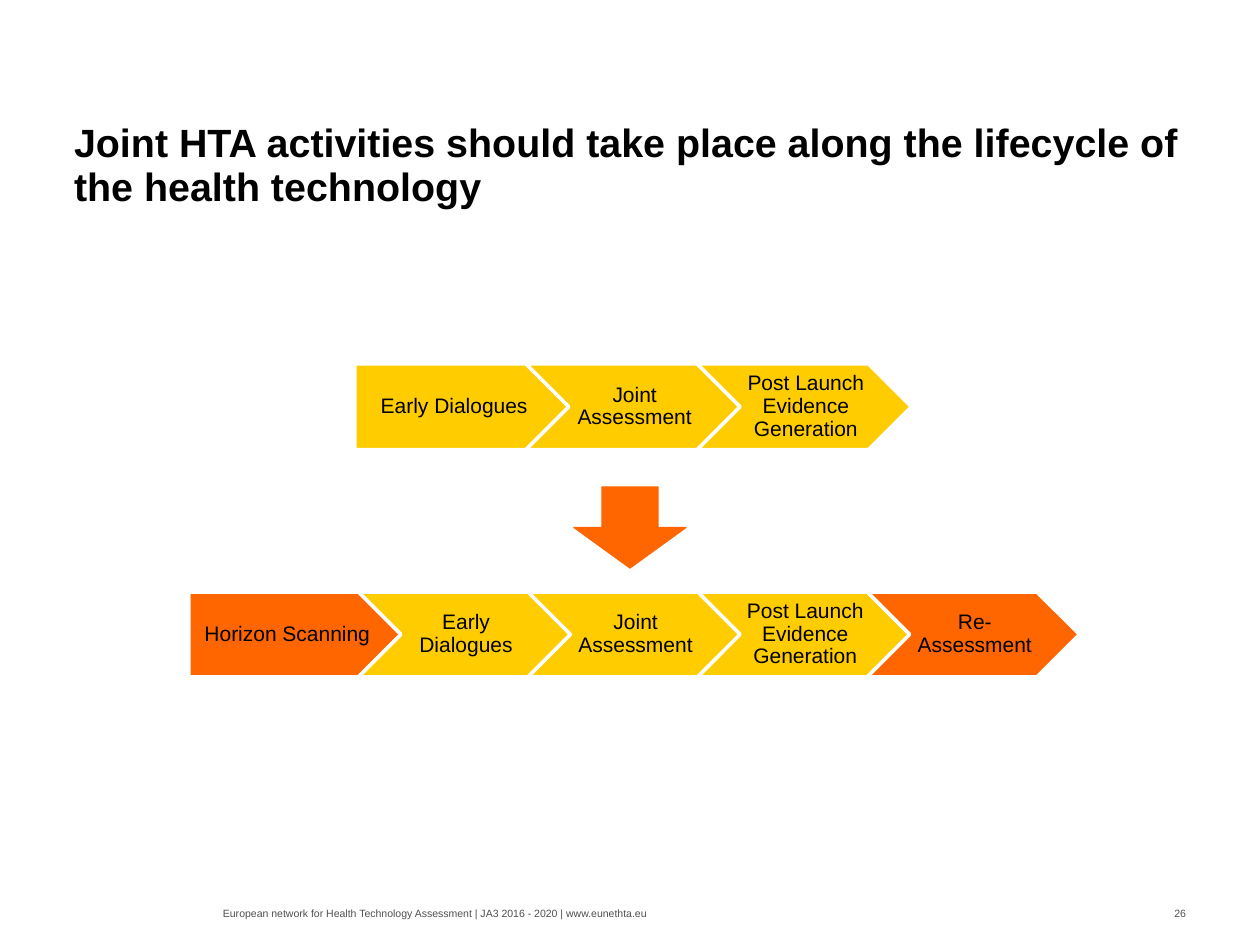
import pptx
import pptx.util
import pptx.dml.color
import pptx.enum.shapes
import pptx.enum.text

SHAPE = pptx.enum.shapes.MSO_SHAPE
ALIGN = pptx.enum.text.PP_ALIGN
ANCHOR = pptx.enum.text.MSO_ANCHOR

YELLOW, ORANGE, WHITE, BLACK, GREY = "FFCC00", "FF6600", "FFFFFF", "000000", "505050"


def px(n):
    return pptx.util.Emu(round(n * 914400 / 126))


def color(value):
    return pptx.dml.color.RGBColor.from_string(value)


class SlideBuilder:
    font = "Arial"

    def __init__(self, slide):
        self.s = slide

    def set_text(self, sp, text, size, ink=BLACK, bold=False, align=ALIGN.LEFT,
                 anchor=ANCHOR.TOP, spacing=1.0, insets=(0, 0, 0, 0)):
        left, top, right, bottom = map(px, insets)
        tf = sp.text_frame
        p = tf.paragraphs[0]
        r = p.add_run()
        formats = (
            (tf, {"word_wrap": True, "auto_size": pptx.enum.text.MSO_AUTO_SIZE.NONE,
                  "vertical_anchor": anchor, "margin_left": left, "margin_top": top,
                  "margin_right": right, "margin_bottom": bottom}),
            (p, {"alignment": align, "line_spacing": spacing}),
            (r, {"text": text}),
            (r.font, {"name": self.font, "size": pptx.util.Pt(size), "bold": bold}),
        )
        for target, values in formats:
            for name, value in values.items():
                setattr(target, name, value)
        r.font.color.rgb = color(ink)

    def title(self, x, y, w, h, text):
        sp = self.s.shapes.title
        sp.left, sp.top, sp.width, sp.height = map(px, (x, y, w, h))
        self.set_text(sp, text, 22.5, bold=True, anchor=ANCHOR.BOTTOM, spacing=0.95)

    def small_text(self, x, y, w, h, text, align=ALIGN.LEFT):
        sp = self.s.shapes.add_textbox(*map(px, (x, y, w, h)))
        self.set_text(sp, text, 6, ink=GREY, align=align)

    def shape(self, kind, x, y, w, h, fill, line, weight):
        sp = self.s.shapes.add_shape(kind, *map(px, (x, y, w, h)))
        sp.shadow.inherit = False
        sp.fill.solid()
        sp.fill.fore_color.rgb = color(fill)
        sp.line.color.rgb = color(line)
        sp.line.width = pptx.util.Pt(weight)
        return sp

    def process(self, x, y, w, steps):
        """Row of arrows, each overlapping the one before by a fifth."""
        for i, (text, fill) in enumerate(steps):
            kind, inset = (SHAPE.CHEVRON, 6) if i else (SHAPE.PENTAGON, 9)
            sp = self.shape(kind, x + i * w * 0.8, y, w, w * 0.4, fill, WHITE, 2)
            self.set_text(sp, text, 12, align=ALIGN.CENTER, anchor=ANCHOR.MIDDLE,
                          spacing=0.9, insets=(inset, 5, 3, 5))


def main():
    prs = pptx.Presentation()
    prs.slide_width, prs.slide_height = px(1260), px(945)
    page = SlideBuilder(prs.slides.add_slide(prs.slide_layouts[5]))

    # Title
    page.title(74, 81, 1111, 130, "Joint HTA activities should take place along "
               "the lifecycle of the health technology")

    # Current activities, then the extended lifecycle
    core = [("Early Dialogues", YELLOW), ("Joint Assessment", YELLOW),
            ("Post Launch Evidence Generation", YELLOW)]
    page.process(355, 364, 214, core)
    page.shape(SHAPE.DOWN_ARROW, 574, 487, 112, 81, ORANGE, ORANGE, 0.75)
    page.process(189, 592, 212, [("Horizon Scanning", ORANGE), *core,
                                 ("Re-Assessment", ORANGE)])

    # Footer
    page.small_text(223, 907, 591, 13, "European network for Health Technology "
                    "Assessment | JA3 2016 - 2020 | www.eunethta.eu")
    page.small_text(1101, 907, 85, 16, "26", ALIGN.RIGHT)

    prs.save("out.pptx")


if __name__ == "__main__":
    main()
